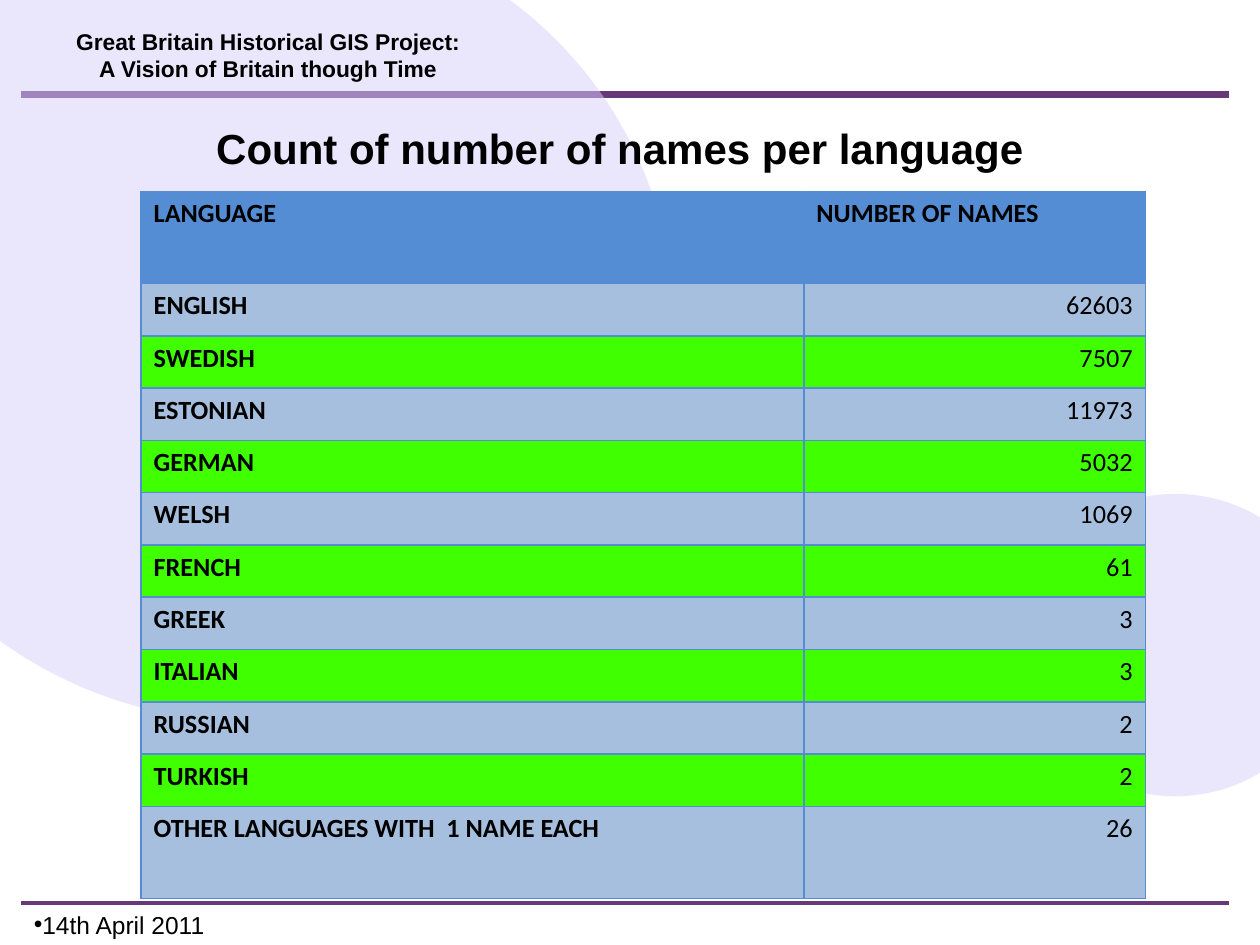
import dataclasses

import pptx
import pptx.util
from lxml import etree
from pptx.dml.color import RGBColor
from pptx.enum.shapes import MSO_CONNECTOR, MSO_SHAPE
from pptx.enum.text import MSO_ANCHOR, PP_ALIGN
from pptx.oxml.ns import qn
from pptx.util import Inches, Pt


@dataclasses.dataclass(frozen=True)
class Theme:
    ink: str = "000000"
    rule: str = "683979"
    disc: str = "D7D1FD"
    head: str = "548DD4"
    bands: tuple = ("A7BFDE", "3FFF00")
    body_font: str = "Arial"
    table_font: str = "Calibri"
    title_size: int = 24
    header_size: int = 13
    footer_size: int = 14
    table_size: int = 15


T = Theme()

COUNTS = [
    ("ENGLISH", 62603), ("SWEDISH", 7507), ("ESTONIAN", 11973),
    ("GERMAN", 5032), ("WELSH", 1069), ("FRENCH", 61), ("GREEK", 3),
    ("ITALIAN", 3), ("RUSSIAN", 2), ("TURKISH", 2),
    ("OTHER LANGUAGES WITH  1 NAME EACH", 26),
]


def write(tf, text, size, font=T.body_font, bold=False, align=PP_ALIGN.LEFT,
          anchor=MSO_ANCHOR.TOP, bullet=None):
    tf.word_wrap = True
    tf.vertical_anchor = anchor
    p = tf.paragraphs[0]
    p.alignment = align
    if bullet:
        pPr = p._p.get_or_add_pPr()
        etree.SubElement(pPr, qn("a:buFont")).set("typeface", font)
        etree.SubElement(pPr, qn("a:buChar")).set("char", bullet)
    p.text = text
    for r in p.runs:
        r.font.name, r.font.size, r.font.bold = font, Pt(size), bold
        r.font.color.rgb = RGBColor.from_string(T.ink)


def add_text(s, box, text, size, **fmt):
    tb = s.shapes.add_textbox(*map(Inches, box))
    write(tb.text_frame, text, size, **fmt)


def add_rule(s, left, right, y, width):
    ln = s.shapes.add_connector(MSO_CONNECTOR.STRAIGHT, Inches(right),
                                Inches(y), Inches(left), Inches(y))
    ln.line.color.rgb = RGBColor.from_string(T.rule)
    ln.line.width = Pt(width)
    etree.SubElement(ln._element.spPr, qn("a:effectLst"))


def add_disc(s, box):
    """Half-transparent background ellipse."""
    sp = s.shapes.add_shape(MSO_SHAPE.OVAL, *map(Inches, box))
    sp.shadow.inherit = False
    sp.fill.solid()
    sp.fill.fore_color.rgb = RGBColor.from_string(T.disc)
    color = sp._element.spPr.find(qn("a:solidFill"))[0]
    etree.SubElement(color, qn("a:alpha")).set("val", "50000")
    sp.line.fill.background()


def add_backdrop(s):
    for y, width in ((0.75, 4.5), (7.17, 2.25)):
        add_rule(s, 0.17, 9.75, y, width)
    for box in ((-1.33, -0.67, 6.67, 6.4), (8.08, 3.92, 2.5, 2.4)):
        add_disc(s, box)


def style_cell(cell, fill):
    cell.fill.solid()
    cell.fill.fore_color.rgb = RGBColor.from_string(fill)
    tcPr = cell._tc.get_or_add_tcPr()
    for i, side in enumerate(("lnL", "lnR", "lnT", "lnB")):
        ln = etree.Element(qn(f"a:{side}"), w=str(Pt(1)))
        solid = etree.SubElement(ln, qn("a:solidFill"))
        etree.SubElement(solid, qn("a:srgbClr")).set("val", T.head)
        tcPr.insert(i, ln)


def add_language_table(s, box):
    left, top, width, height = box
    rows = [("LANGUAGE", "NUMBER OF NAMES"), *COUNTS]
    last = len(rows) - 1
    tbl = s.shapes.add_table(len(rows), 2, *map(Inches, box)).table
    tall = 0.73
    short = (height - 2 * tall) / (len(rows) - 2)
    names_width = 0.66 * width
    tbl.columns[0].width = Inches(names_width)
    tbl.columns[1].width = Inches(width - names_width)
    for i, row in enumerate(rows):
        tbl.rows[i].height = Inches(tall if i in (0, last) else short)
        fill = T.bands[(i - 1) % 2] if i else T.head
        for j, value in enumerate(row):
            number = i > 0 and j == 1
            cell = tbl.cell(i, j)
            style_cell(cell, fill)
            write(cell.text_frame, str(value), T.table_size,
                  font=T.table_font, bold=not number,
                  align=PP_ALIGN.RIGHT if number else PP_ALIGN.LEFT)


def main():
    prs = pptx.Presentation()
    prs.slide_width, prs.slide_height = Inches(10), Inches(7.5)
    s = prs.slides.add_slide(prs.slide_layouts[6])
    add_backdrop(s)
    add_text(s, (0.25, 0.17, 3.75, 0.53),
             "Great Britain Historical GIS Project:\v"
             "A Vision of Britain though Time",
             T.header_size, bold=True, align=PP_ALIGN.CENTER)
    add_text(s, (0.17, 7.17, 2.08, 0.25), "14th April 2011",
             T.footer_size, bullet="•")
    add_text(s, (0.67, 0.92, 8.5, 0.5),
             "Count of number of names per language", T.title_size,
             bold=True, align=PP_ALIGN.CENTER, anchor=MSO_ANCHOR.MIDDLE)
    add_language_table(s, (1.12, 1.52, 7.97, 5.61))
    prs.save("out.pptx")


if __name__ == "__main__":
    main()
